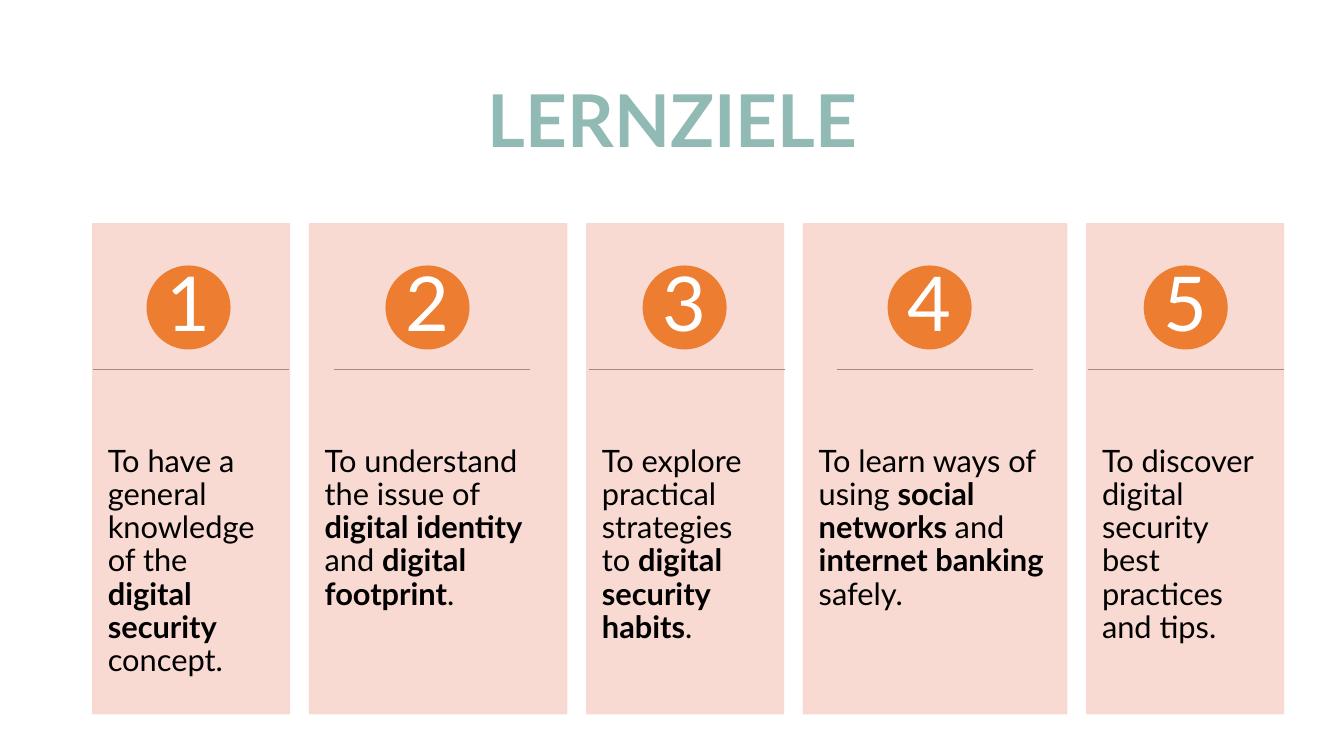
from lxml.etree import SubElement
from pptx import Presentation
from pptx.dml.color import RGBColor
from pptx.enum.shapes import MSO_CONNECTOR, MSO_SHAPE
from pptx.enum.text import MSO_ANCHOR, PP_ALIGN
from pptx.oxml.ns import qn
from pptx.util import Inches, Pt

TEAL, BLUSH, ORANGE = "92BAB5", "F8D7CE", "ED7D31"
GREY, BLACK, WHITE = "A08C86", "000000", "FFFFFF"
GAP = 0.2

GOALS = [
    (1.95, 0.54, 0, [("To have a general knowledge of the ", False),
                     ("digital security ", True), ("concept.", False)]),
    (2.55, 0.76, 0.24, [("To understand the issue of ", False),
                        ("digital identity ", True), ("and ", False),
                        ("digital footprint", True), (".", False)]),
    (1.95, 0.56, 0.02, [("To explore practical strategies to ", False),
                        ("digital security habits", True), (".", False)]),
    (2.61, 0.84, 0.33, [("To learn ways of using ", False),
                        ("social networks ", True), ("and ", False),
                        ("internet banking ", True), ("safely.", False)]),
    (1.95, 0.57, 0.01, [("To discover digital security best practices and tips.", False)]),
]


def color(value):
    """Turn a hex string into a colour."""
    return RGBColor.from_string(value)


class Slide:
    """Holds the style and the page being drawn."""

    def __init__(self, page, font="Lato"):
        """Keep the page and its font."""
        self.page, self.font = page, font

    def style(self, para, size, hue, align=PP_ALIGN.LEFT):
        """Format one paragraph."""
        para.alignment, para.line_spacing = align, 0.9
        para.font.name, para.font.size = self.font, Pt(size)
        para.font.color.rgb = color(hue)

    def frame(self, shape, anchor, side, end):
        """Set wrapping, anchor and insets, and return the first paragraph."""
        frame = shape.text_frame
        frame.word_wrap, frame.vertical_anchor = True, anchor
        frame.margin_left = frame.margin_right = Inches(side)
        frame.margin_top = frame.margin_bottom = Inches(end)
        return frame.paragraphs[0]

    def title(self, text, left, top, width, height):
        """Place and format the title placeholder."""
        title = self.page.shapes.title
        title.left, title.top = Inches(left), Inches(top)
        title.width, title.height = Inches(width), Inches(height)
        para = self.frame(title, MSO_ANCHOR.MIDDLE, 0.1, 0.05)
        para.text = text
        self.style(para, 52, TEAL, PP_ALIGN.CENTER)
        para.font.bold = True

    def shape(self, kind, left, top, width, height, hue, opacity=100):
        """Draw a filled shape with a matching outline."""
        shape = self.page.shapes.add_shape(
            kind, Inches(left), Inches(top), Inches(width), Inches(height))
        shape.shadow.inherit = False
        shape.fill.solid()
        shape.fill.fore_color.rgb = shape.line.color.rgb = color(hue)
        shape.line.width = Pt(1)
        if opacity < 100:
            for tint in shape.element.spPr.iter(qn("a:srgbClr")):
                SubElement(tint, qn("a:alpha"), val=str(opacity * 1000))
        return shape

    def badge(self, number, left, top, size):
        """Draw a numbered circle."""
        circle = self.shape(MSO_SHAPE.OVAL, left, top, size, size, ORANGE)
        para = self.frame(circle, MSO_ANCHOR.MIDDLE, 0.06, 0.01)
        para.text = str(number)
        self.style(para, 54, WHITE, PP_ALIGN.CENTER)

    def rule(self, left, top, width):
        """Draw a thin horizontal line."""
        line = self.page.shapes.add_connector(
            MSO_CONNECTOR.STRAIGHT, Inches(left), Inches(top),
            Inches(left + width), Inches(top))
        line.line.color.rgb, line.line.width = color(GREY), Pt(0.75)
        SubElement(line.element.spPr, qn("a:effectLst"))

    def text(self, spans, left, top, width, height):
        """Write a paragraph with bold and plain spans."""
        box = self.page.shapes.add_textbox(
            Inches(left), Inches(top), Inches(width), Inches(height))
        para = self.frame(box, MSO_ANCHOR.TOP, 0.15, 0.36)
        self.style(para, 22, BLACK)
        for words, bold in spans:
            span = para.add_run()
            span.text, span.font.bold = words, bold


def main():
    """Build and save the deck."""
    deck = Presentation()
    deck.slide_width, deck.slide_height = Inches(13.33), Inches(7.5)
    slide = Slide(deck.slides.add_slide(deck.slide_layouts[5]))
    slide.title("LERNZIELE", 0.92, 0.61, 11.5, 1.24)
    left = 0.92
    for number, (width, badge_offset, rule_offset, spans) in enumerate(GOALS, 1):
        slide.shape(MSO_SHAPE.RECTANGLE, left, 2.22, width, 4.86, BLUSH, 90)
        slide.text(spans, left, 4.06, width, 2.92)
        slide.badge(number, left + badge_offset, 2.64, 0.82)
        slide.rule(left + rule_offset, 3.67, 1.95)
        left += width + GAP
    deck.save("out.pptx")


if __name__ == "__main__":
    main()
